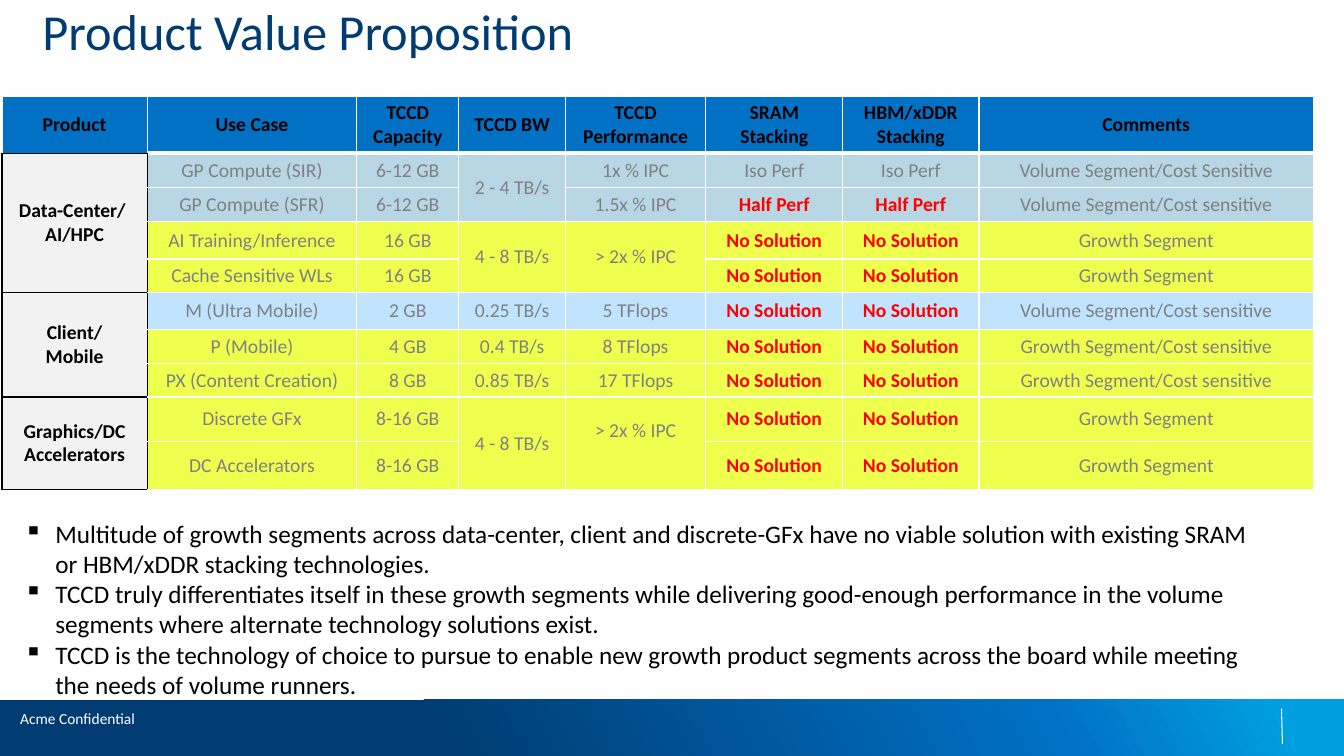
import pptx
import pptx.util
import pptx.dml.color
import pptx.enum.shapes
import pptx.enum.text
import pptx.oxml
import pptx.oxml.ns
from lxml import etree

Inches = pptx.util.Inches
FONT = "Calibri"
COLORS = {
    "navy": "003C71", "blue": "0071C5", "sky": "009FDF", "white": "FFFFFF",
    "black": "000000", "grey": "808080", "red": "FF0000", "product": "F2F2F2",
    "server": "B9D6E5", "growth": "EFFF4D", "mobile": "C0E4FF",
}

HEADINGS = ["Product", "Use Case", "TCCD Capacity", "TCCD BW", "TCCD Performance",
            "SRAM Stacking", "HBM/xDDR Stacking", "Comments"]
NONE = "No Solution"
GROWTH = "Growth Segment"
# Row tint, then cells; None continues the cell above
SEGMENTS = [
    ("server", "Data-Center/ \nAI/HPC", "GP Compute (SIR)", "6-12 GB", "2 - 4 TB/s", "1x % IPC",
     "Iso Perf", "Iso Perf", "Volume Segment/Cost Sensitive"),
    ("server", None, "GP Compute (SFR)", "6-12 GB", None, "1.5x % IPC",
     "Half Perf", "Half Perf", "Volume Segment/Cost sensitive"),
    ("growth", None, "AI Training/Inference", "16 GB", "4 - 8 TB/s", "> 2x % IPC", NONE, NONE, GROWTH),
    ("growth", None, "Cache Sensitive WLs", "16 GB", None, None, NONE, NONE, GROWTH),
    ("mobile", "Client/\nMobile", "M (Ultra Mobile)", "2 GB", "0.25 TB/s", "5 TFlops",
     NONE, NONE, "Volume Segment/Cost sensitive"),
    ("growth", None, "P (Mobile)", "4 GB", "0.4 TB/s", "8 TFlops",
     NONE, NONE, "Growth Segment/Cost sensitive"),
    ("growth", None, "PX (Content Creation)", "8 GB", "0.85 TB/s", "17 TFlops",
     NONE, NONE, "Growth Segment/Cost sensitive"),
    ("growth", "Graphics/DC Accelerators", "Discrete GFx", "8-16 GB", "4 - 8 TB/s", "> 2x % IPC",
     NONE, NONE, GROWTH),
    ("growth", None, "DC Accelerators", "8-16 GB", None, None, NONE, NONE, GROWTH),
]
COLUMN_WIDTHS = [1.44, 2.08, 1.01, 1.06, 1.39, 1.36, 1.35, 3.32]
ROW_HEIGHTS = [0.56, 0.34, 0.34, 0.37, 0.33, 0.37, 0.34, 0.33, 0.44, 0.48]

TAKEAWAYS = [
    "Multitude of growth segments across data-center, client and discrete-GFx have no viable "
    "solution with existing SRAM or HBM/xDDR stacking technologies.",
    "TCCD truly differentiates itself in these growth segments while delivering good-enough "
    "performance in the volume segments where alternate technology solutions exist.",
    "TCCD is the technology of choice to pursue to enable new growth product segments across "
    "the board while meeting the needs of volume runners.",
]


def rgb(name):
    return pptx.dml.color.RGBColor.from_string(COLORS[name])


def add_run(paragraph, text, size, color, bold=False):
    run = paragraph.add_run()
    run.text = text
    run.font.name = FONT
    run.font.size = pptx.util.Pt(size)
    run.font.bold = bold
    run.font.color.rgb = rgb(color)


def add_text_frame(slide, left, top, width, height, inset=True):
    frame = slide.shapes.add_textbox(*map(Inches, (left, top, width, height))).text_frame
    frame.word_wrap = True
    if not inset:
        frame.margin_left = frame.margin_right = frame.margin_top = frame.margin_bottom = 0
    return frame


def add_footer(slide, left, top, width, height):
    band = slide.shapes.add_shape(pptx.enum.shapes.MSO_SHAPE.RECTANGLE,
                                  *map(Inches, (left, top, width, height)))
    band.shadow.inherit = False
    band.line.fill.background()
    stops = "".join(f'<a:gs pos="{pos}000"><a:srgbClr val="{COLORS[name]}"/></a:gs>'
                    for pos, name in ((32, "navy"), (78, "blue"), (95, "sky")))
    gradient = pptx.oxml.parse_xml(
        f'<a:gradFill {pptx.oxml.ns.nsdecls("a")} rotWithShape="1"><a:gsLst>{stops}</a:gsLst>'
        f'<a:lin ang="{331 * 60000}" scaled="0"/></a:gradFill>')
    band.element.spPr.find(pptx.oxml.ns.qn("a:prstGeom")).addnext(gradient)

    # Divider near the right edge
    divider = slide.shapes.add_connector(
        pptx.enum.shapes.MSO_CONNECTOR.STRAIGHT, Inches(left + 12.71), Inches(top + 0.09),
        Inches(left + 12.72), Inches(top + 0.44))
    divider.line.color.rgb = rgb("white")
    divider.line.width = pptx.util.Pt(0.75)
    etree.SubElement(divider.element.spPr, pptx.oxml.ns.qn("a:effectLst"))

    notice = add_text_frame(slide, left + 0.2, top + 0.09, 1.75, 0.19, inset=False)
    add_run(notice.paragraphs[0], "Acme Confidential", 11, "white")


def add_title(slide, left, top, width, height):
    title = add_text_frame(slide, left, top, width, height, inset=False)
    add_run(title.paragraphs[0], "Product Value Proposition", 36, "navy")


def set_borders(cell, **sides):
    for side in "LRTB":
        color, points = sides.get(side, ("white", 1))
        cell._tc.get_or_add_tcPr().append(pptx.oxml.parse_xml(
            f'<a:ln{side} {pptx.oxml.ns.nsdecls("a")} w="{points * 12700}"><a:solidFill>'
            f'<a:srgbClr val="{COLORS[color]}"/></a:solidFill></a:ln{side}>'))


def style_cell(cell, text, fill, color, bold, borders):
    set_borders(cell, **borders)
    cell.fill.solid()
    cell.fill.fore_color.rgb = rgb(fill)
    cell.vertical_anchor = pptx.enum.text.MSO_ANCHOR.MIDDLE
    cell.margin_top = cell.margin_bottom = Inches(0.04)
    for i, line in enumerate((text or "").split("\n")):
        paragraph = cell.text_frame.add_paragraph() if i else cell.text_frame.paragraphs[0]
        paragraph.alignment = pptx.enum.text.PP_ALIGN.CENTER
        paragraph.font.size = pptx.util.Pt(14)
        if line:
            add_run(paragraph, line, 14, color, bold)


def add_segment_table(slide, left, top):
    table = slide.shapes.add_table(
        len(ROW_HEIGHTS), len(COLUMN_WIDTHS), Inches(left), Inches(top),
        Inches(sum(COLUMN_WIDTHS)), Inches(sum(ROW_HEIGHTS))).table
    table.first_row = table.horz_banding = False
    for column, width in zip(table.columns, COLUMN_WIDTHS):
        column.width = Inches(width)
    for row, height in zip(table.rows, ROW_HEIGHTS):
        row.height = Inches(height)

    # Heading row
    for c, heading in enumerate(HEADINGS):
        bottom = ("white", 3) if c else ("black", 1)
        style_cell(table.cell(0, c), heading, "blue", "black", True, {"B": bottom})

    # Segment rows
    black = ("black", 1)
    for r, (tint, *texts) in enumerate(SEGMENTS, 1):
        for c, text in enumerate(texts):
            if c == 0:
                look = ("product", "black", True, dict.fromkeys("LRTB", black))
            else:
                weak = text in (NONE, "Half Perf")
                borders = {"L": black} if c == 1 else {}
                if r == 1:
                    borders["T"] = ("white", 3)
                look = (tint, "red" if weak else "grey", weak, borders)
            style_cell(table.cell(r, c), text, *look)

    # Cells spanning the rows left empty below them
    for c in range(len(HEADINGS)):
        starts = [r for r, row in enumerate(SEGMENTS, 1) if row[c + 1] is not None]
        for start, following in zip(starts, starts[1:] + [len(ROW_HEIGHTS)]):
            if following - start > 1:
                table.cell(start, c).merge(table.cell(following - 1, c))
    # The accelerator performance sits above the middle
    table.cell(8, 4).margin_bottom = Inches(0.28)


def add_takeaways(slide, left, top, width, height):
    frame = add_text_frame(slide, left, top, width, height)
    for i, takeaway in enumerate(TAKEAWAYS):
        paragraph = frame.add_paragraph() if i else frame.paragraphs[0]
        properties = paragraph._p.get_or_add_pPr()
        properties.set("marL", str(Inches(0.31)))
        properties.set("indent", str(-Inches(0.31)))
        etree.SubElement(properties, pptx.oxml.ns.qn("a:buChar")).set("char", "▪")
        add_run(paragraph, takeaway, 18, "black")


def main():
    deck = pptx.Presentation()
    deck.slide_width, deck.slide_height = Inches(13.33), Inches(7.5)
    slide = deck.slides.add_slide(deck.slide_layouts[6])
    add_footer(slide, 0, 6.94, 13.33, 0.56)
    add_title(slide, 0.42, 0, 12, 1.08)
    add_takeaways(slide, 0.14, 5.09, 12.55, 1.92)
    add_segment_table(slide, 0.02, 0.96)
    deck.save("out.pptx")


if __name__ == "__main__":
    main()
